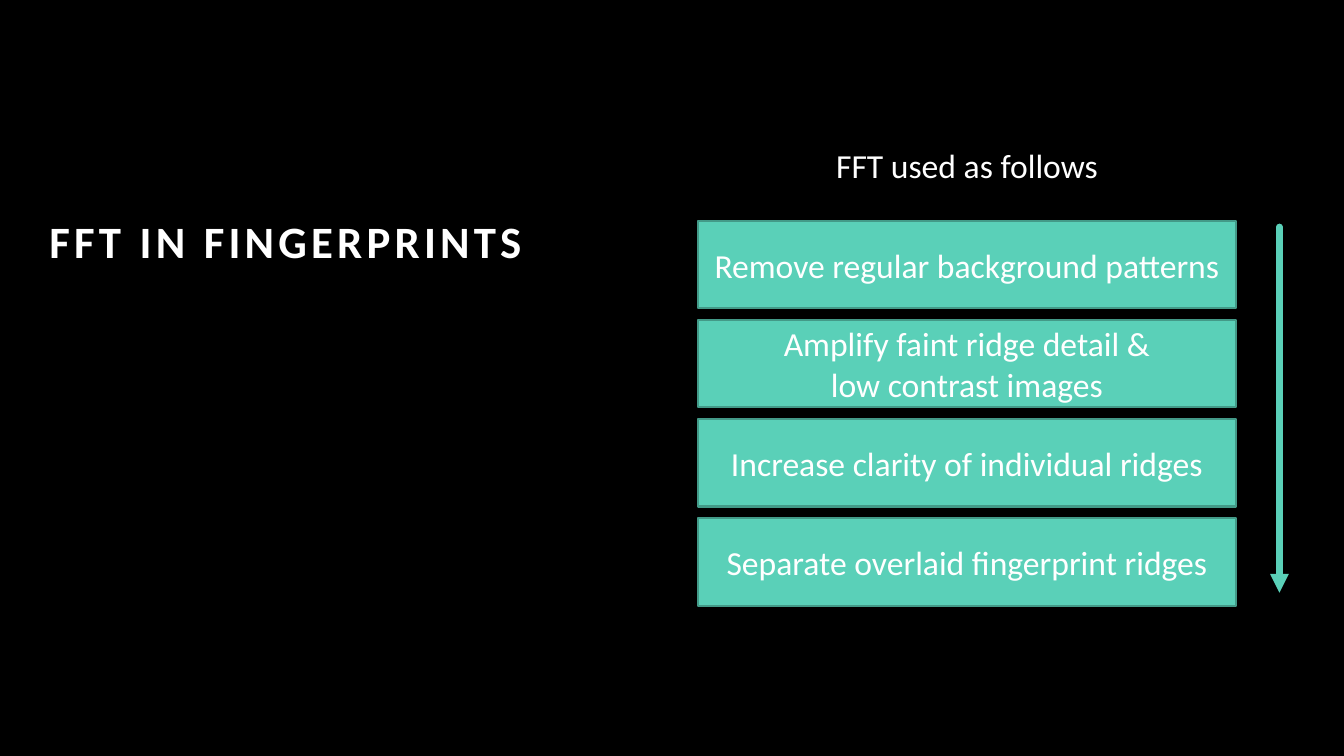
"""Build the slide on FFT in fingerprints, with its four steps and an arrow."""
from lxml.etree import SubElement
from pptx import Presentation
from pptx.dml.color import RGBColor
from pptx.enum.shapes import MSO_CONNECTOR, MSO_SHAPE
from pptx.enum.text import MSO_ANCHOR, PP_ALIGN
from pptx.oxml.ns import qn
from pptx.util import Inches, Pt

BLACK = RGBColor(0, 0, 0)
WHITE = RGBColor(255, 255, 255)
MINT = RGBColor(0x5A, 0xD0, 0xB8)
EDGE = RGBColor(0x43, 0x9A, 0x88)

LEFT, TOP = Inches(6.92), Inches(2.19)
WIDE, HIGH = Inches(5.34), Inches(0.87)
PITCH = Inches(0.983)


def write(shape, text, size, align):
    """Fill a shape with white text, centred in height."""
    frame = shape.text_frame
    frame.word_wrap = True
    frame.vertical_anchor = MSO_ANCHOR.MIDDLE
    frame.text = text
    for para in frame.paragraphs:
        para.alignment = align
        para.font.name = "Calibri"
        para.font.size = Pt(size)
        para.font.color.rgb = WHITE


deck = Presentation()
deck.slide_width, deck.slide_height = Inches(13.33), Inches(7.5)
slide = deck.slides.add_slide(deck.slide_layouts[5])
slide.background.fill.solid()
slide.background.fill.fore_color.rgb = BLACK

title = slide.shapes.title
title.left, title.top = Inches(0.39), Inches(1.84)
title.width, title.height = Inches(9), Inches(1.09)
write(title, "FFT IN FINGERPRINTS", 32, PP_ALIGN.LEFT)
head = title.text_frame.paragraphs[0]
head.font.bold = True
head.runs[0].font._element.set("spc", "300")

intro = slide.shapes.add_textbox(LEFT, TOP - PITCH, WIDE, HIGH)
write(intro, "FFT used as follows", 24, PP_ALIGN.CENTER)

steps = [
    "Remove regular background patterns",
    "Amplify faint ridge detail &\nlow contrast images",
    "Increase clarity of individual ridges",
    "Separate overlaid fingerprint ridges",
]
for row, step in enumerate(steps):
    box = slide.shapes.add_shape(
        MSO_SHAPE.RECTANGLE, LEFT, TOP + row * PITCH, WIDE, HIGH)
    box.shadow.inherit = False
    box.fill.solid()
    box.fill.fore_color.rgb = MINT
    box.line.color.rgb = EDGE
    box.line.width = Pt(1.5)
    write(box, step, 24, PP_ALIGN.CENTER)

arrow = slide.shapes.add_connector(
    MSO_CONNECTOR.STRAIGHT,
    Inches(12.69), Inches(2.25), Inches(12.69), Inches(5.88))
arrow.line.color.rgb = MINT
arrow.line.width = Pt(4.5)
line = arrow.line._get_or_add_ln()
line.set("cap", "rnd")
SubElement(line, qn("a:round"))
SubElement(line, qn("a:tailEnd"), type="triangle")
SubElement(arrow._element.spPr, qn("a:effectLst"))

deck.save("out.pptx")
